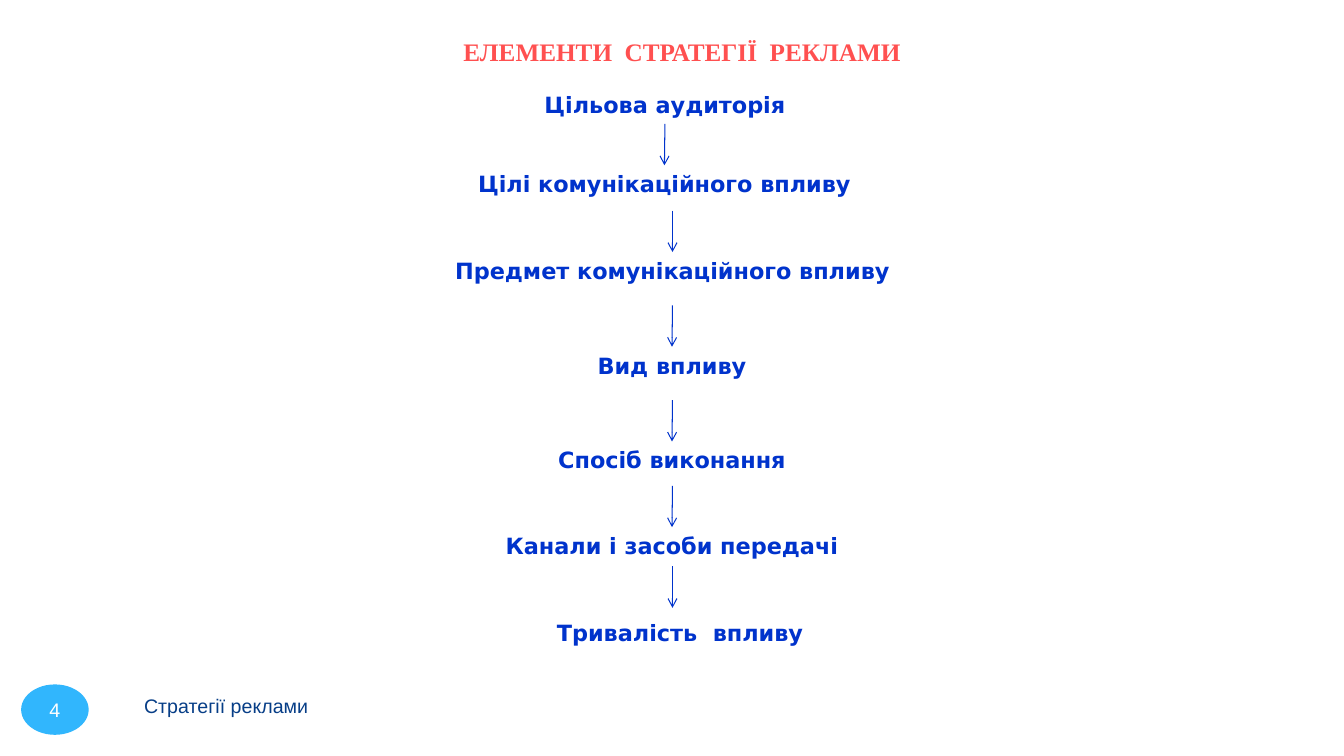
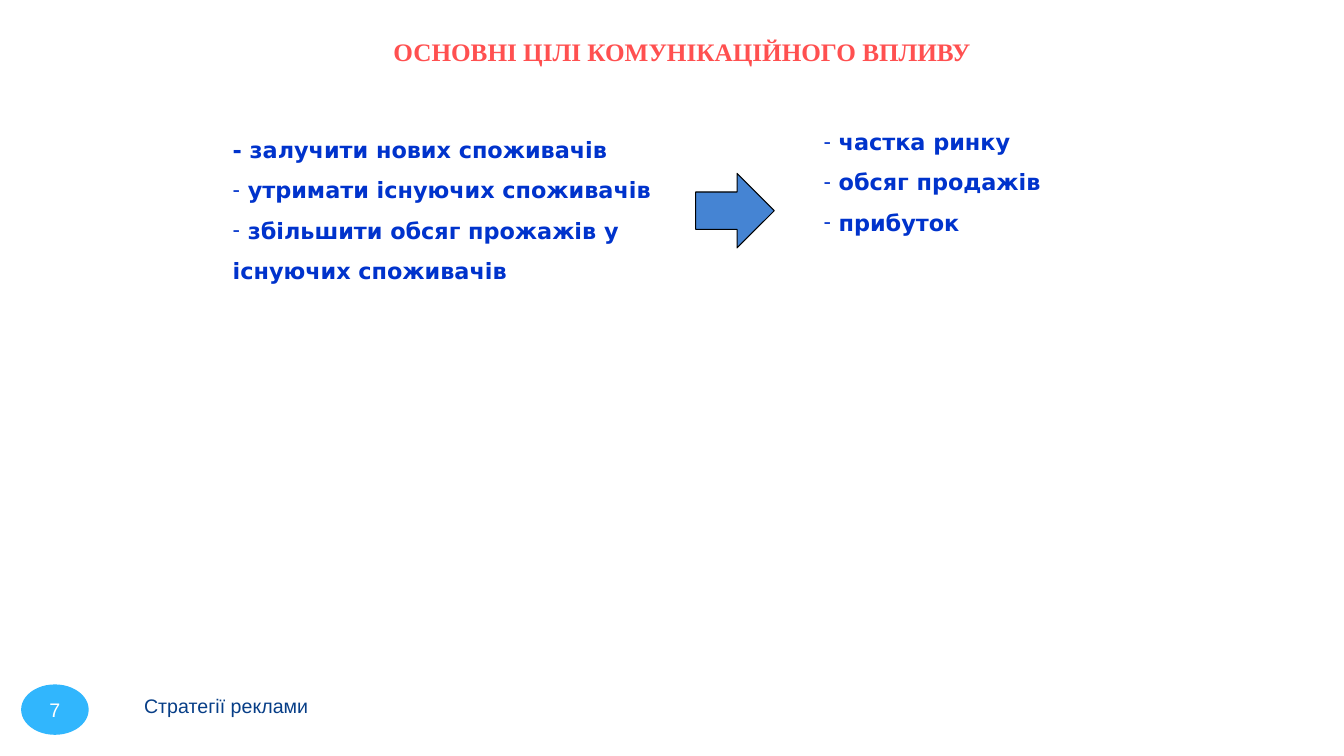
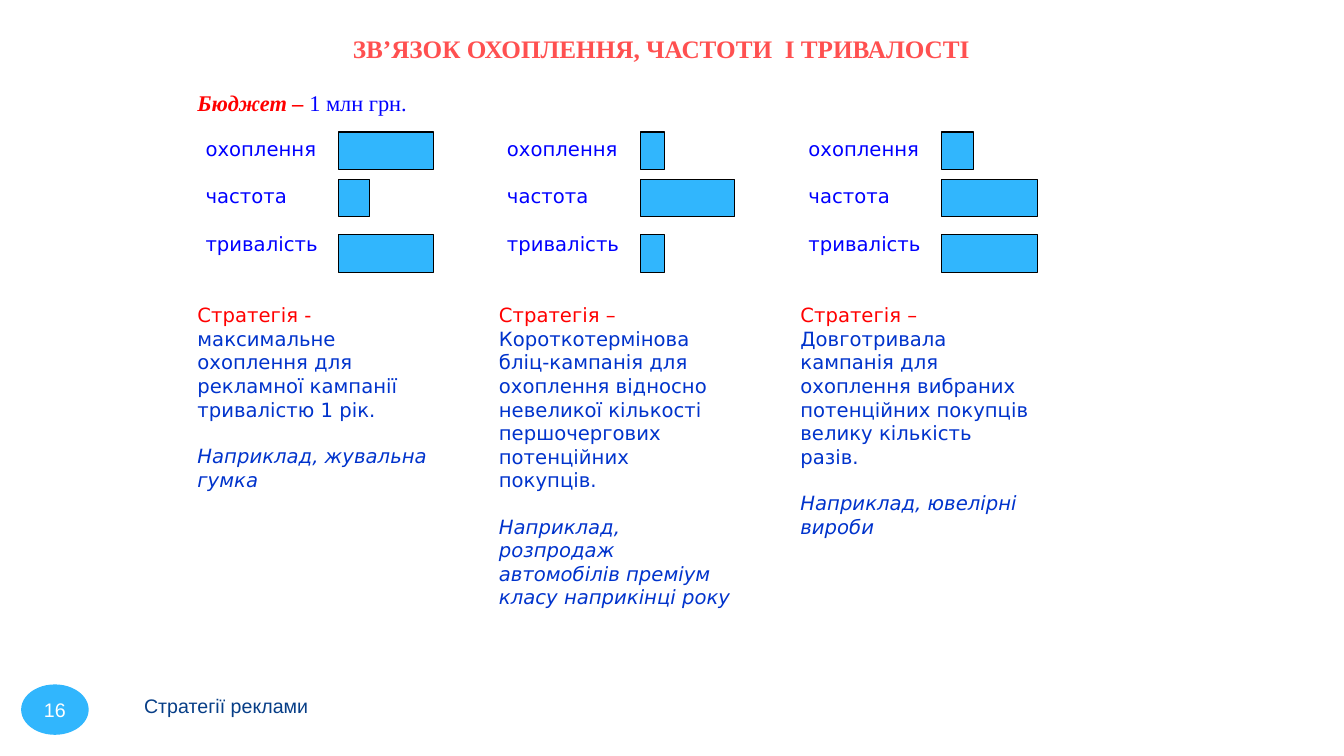
from pptx import Presentation
from pptx.dml.color import RGBColor
from pptx.enum.shapes import MSO_CONNECTOR as Connector, MSO_SHAPE as Shape
from pptx.enum.text import MSO_ANCHOR as Anchor, MSO_AUTO_SIZE as AutoSize, PP_ALIGN as Align
from pptx.oxml.ns import qn
from pptx.util import Emu, Pt
from lxml.etree import SubElement

EMU_PER_PX = 9144  # 100 px to the inch


def px(length):
    return Emu(length * EMU_PER_PX)


def rgb(color):
    return RGBColor.from_string(color)


class Deck:
    SERIF, SANS, FOOTER_FONT = "Times New Roman", "DejaVu Sans", "Arial"
    CORAL, RED, BLUE, PURE_BLUE = "FF5050", "FF0000", "0033CC", "0000FF"
    NAVY, SKY, STEEL, BLACK, WHITE = "073E87", "31B6FD", "4584D3", "000000", "FFFFFF"

    def __init__(self):
        self.prs = Presentation()
        self.prs.slide_width, self.prs.slide_height = px(1333), px(750)
        self.slide = None

    def new_slide(self, heading, number, left=362, top=31, width=629):
        """Start a slide with its heading, footer and page number."""
        self.slide = self.prs.slides.add_slide(self.prs.slide_layouts[6])
        title = self.text_box(left, top, width, 40)
        self.run(self.paragraph(title, Align.CENTER), heading, 18, self.SERIF, self.CORAL, bold=True)
        footer = self.text_box(133, 675, 578, 50, grow=False)
        footer.text_frame.vertical_anchor = Anchor.MIDDLE
        self.run(self.paragraph(footer), "Стратегії реклами", 14, self.FOOTER_FONT, self.NAVY)
        badge = self.shape(Shape.OVAL, 21, 679, 67, 50, self.SKY)
        frame = badge.text_frame
        frame.margin_left = frame.margin_right = frame.margin_top = frame.margin_bottom = 0
        frame.word_wrap = False
        frame.vertical_anchor = Anchor.MIDDLE
        self.run(self.paragraph(badge, Align.CENTER), str(number), 14, self.FOOTER_FONT, self.WHITE)

    def text_box(self, left, top, width, height, grow=True):
        box = self.slide.shapes.add_textbox(px(left), px(top), px(width), px(height))
        box.text_frame.word_wrap = True
        if grow:
            box.text_frame.auto_size = AutoSize.SHAPE_TO_FIT_TEXT
        return box

    def paragraph(self, box, align=Align.LEFT):
        """Return the first paragraph while it is empty, else a new one."""
        frame = box.text_frame
        first = frame.paragraphs[0]
        para = frame.add_paragraph() if first.runs else first
        para.alignment = align
        return para

    def run(self, para, text, size, font, color, bold=False, italic=False):
        run = para.add_run()
        run.text = text
        run.font.size, run.font.name = Pt(size), font
        run.font.bold, run.font.italic = bold, italic
        run.font.color.rgb = rgb(color)

    def dash_list(self, left, top, width, height, items, typed_first=False):
        box = self.text_box(left, top, width, height)
        for i, item in enumerate(items):
            para = self.paragraph(box)
            para.line_spacing = 1.5
            if i or not typed_first:
                props = para._p.get_or_add_pPr()
                SubElement(props, qn("a:buFont")).set("typeface", self.FOOTER_FONT)
                SubElement(props, qn("a:buChar")).set("char", "-")
            self.run(para, item, 16, self.SANS, self.BLUE, bold=True)

    def shape(self, kind, left, top, width, height, fill, outline=None):
        shape = self.slide.shapes.add_shape(kind, px(left), px(top), px(width), px(height))
        shape.shadow.inherit = False
        shape.fill.solid()
        shape.fill.fore_color.rgb = rgb(fill)
        if outline:
            shape.line.color.rgb = rgb(outline)
            shape.line.width = Pt(0.75)
        else:
            shape.line.fill.background()
        return shape

    def arrow(self, x, top, bottom, above=None, below=None):
        """Draw a downward arrow, joined to the boxes that are given."""
        arrow = self.slide.shapes.add_connector(
            Connector.STRAIGHT, px(x), px(top), px(x), px(bottom))
        arrow.line.color.rgb = rgb(self.BLUE)
        arrow.line.width = Pt(0.75)
        SubElement(arrow.line._get_or_add_ln(), qn("a:tailEnd")).set("type", "arrow")
        SubElement(arrow._element.spPr, qn("a:effectLst"))
        if above is not None:
            arrow.begin_connect(above, 2)
        if below is not None:
            arrow.end_connect(below, 0)


def strategy_elements(deck):
    deck.new_slide("ЕЛЕМЕНТИ  СТРАТЕГІЇ  РЕКЛАМИ", 4)
    label_height, arrow_length = 37, 41
    # Label, left, top, width, top of the arrow leading to it
    steps = [
        ("Цільова аудиторія", 464, 86, 391, None),
        ("Цілі комунікаційного впливу", 378, 164, 562, 123),
        ("Предмет комунікаційного впливу", 409, 250, 516, 209),
        ("Вид впливу", 471, 344, 391, 303),
        ("Спосіб виконання", 471, 438, 391, 397),
        ("Канали і засоби передачі", 471, 523, 391, 482),
        ("Тривалість  впливу", 479, 609, 391, 562),
    ]
    previous, previous_bottom = None, None
    for text, left, top, width, arrow_top in steps:
        label = deck.text_box(left, top, width, label_height)
        deck.run(deck.paragraph(label, Align.CENTER), text, 16, deck.SANS, deck.BLUE, bold=True)
        if arrow_top:
            arrow_bottom = arrow_top + arrow_length
            deck.arrow(667, arrow_top, arrow_bottom,
                       above=previous if arrow_top == previous_bottom else None,
                       below=label if arrow_bottom == top else None)
        previous, previous_bottom = label, top + label_height


def communication_goals(deck):
    deck.new_slide("ОСНОВНІ ЦІЛІ КОМУНІКАЦІЙНОГО ВПЛИВУ", 7)
    deck.dash_list(221, 117, 445, 199, [
        "- залучити нових споживачів",
        " утримати існуючих споживачів",
        " збільшити обсяг прожажів у існуючих споживачів",
    ], typed_first=True)
    deck.dash_list(807, 109, 336, 158, [" частка ринку", " обсяг продажів", " прибуток"])
    deck.shape(Shape.RIGHT_ARROW, 690, 172, 78, 74, deck.STEEL, deck.BLACK)


def reach_frequency_duration(deck):
    deck.new_slide("ЗВ’ЯЗОК ОХОПЛЕННЯ, ЧАСТОТИ  І ТРИВАЛОСТІ", 16, 289, 28, 734)

    # Budget
    budget = deck.paragraph(deck.text_box(186, 84, 953, 37))
    deck.run(budget, "Бюджет – ", 16, deck.SERIF, deck.RED, bold=True, italic=True)
    deck.run(budget, "1 млн грн.", 16, deck.SERIF, deck.PURE_BLUE)

    # Measure, top of its label, top of its bar
    measures = [("охоплення", 131, 131), ("частота", 178, 178), ("тривалість", 225, 233)]
    # Bar widths, lead, strategy, example, height of the text
    strategies = [
        ((94, 31, 94), "Стратегія - ",
         "максимальне охоплення для рекламної кампанії тривалістю 1 рік.",
         "Наприклад, жувальна гумка", 199),
        ((24, 94, 24), "Стратегія – ",
         "Короткотермінова бліц-кампанія для охоплення відносно невеликої кількості "
         "першочергових потенційних покупців.",
         "Наприклад, розпродаж автомобілів преміум класу наприкінці року", 293),
        ((32, 95, 95), "Стратегія – ",
         "Довготривала кампанія для охоплення вибраних потенційних покупців "
         "велику кількість разів.",
         "Наприклад, ювелірні вироби", 222),
    ]
    for column, (bars, lead, strategy, example, height) in enumerate(strategies):
        left = 186 + 299 * column
        for (measure, label_top, bar_top), bar_width in zip(measures, bars):
            deck.shape(Shape.RECTANGLE, left + 150, bar_top, bar_width, 37, deck.SKY, deck.BLACK)
            label = deck.text_box(left + 8, label_top, 142, 34)
            deck.run(deck.paragraph(label), measure, 14, deck.SANS, deck.PURE_BLUE)
        description = deck.text_box(left, 296, 252, height)
        summary = deck.paragraph(description)
        deck.run(summary, lead, 14, deck.SANS, deck.RED)
        deck.run(summary, strategy, 14, deck.SANS, deck.BLUE)
        case = deck.paragraph(description)
        case.space_before = Pt(16.5)
        deck.run(case, example, 14, deck.SANS, deck.BLUE, italic=True)


def main():
    deck = Deck()
    strategy_elements(deck)
    communication_goals(deck)
    reach_frequency_duration(deck)
    deck.prs.save("out.pptx")


if __name__ == "__main__":
    main()
